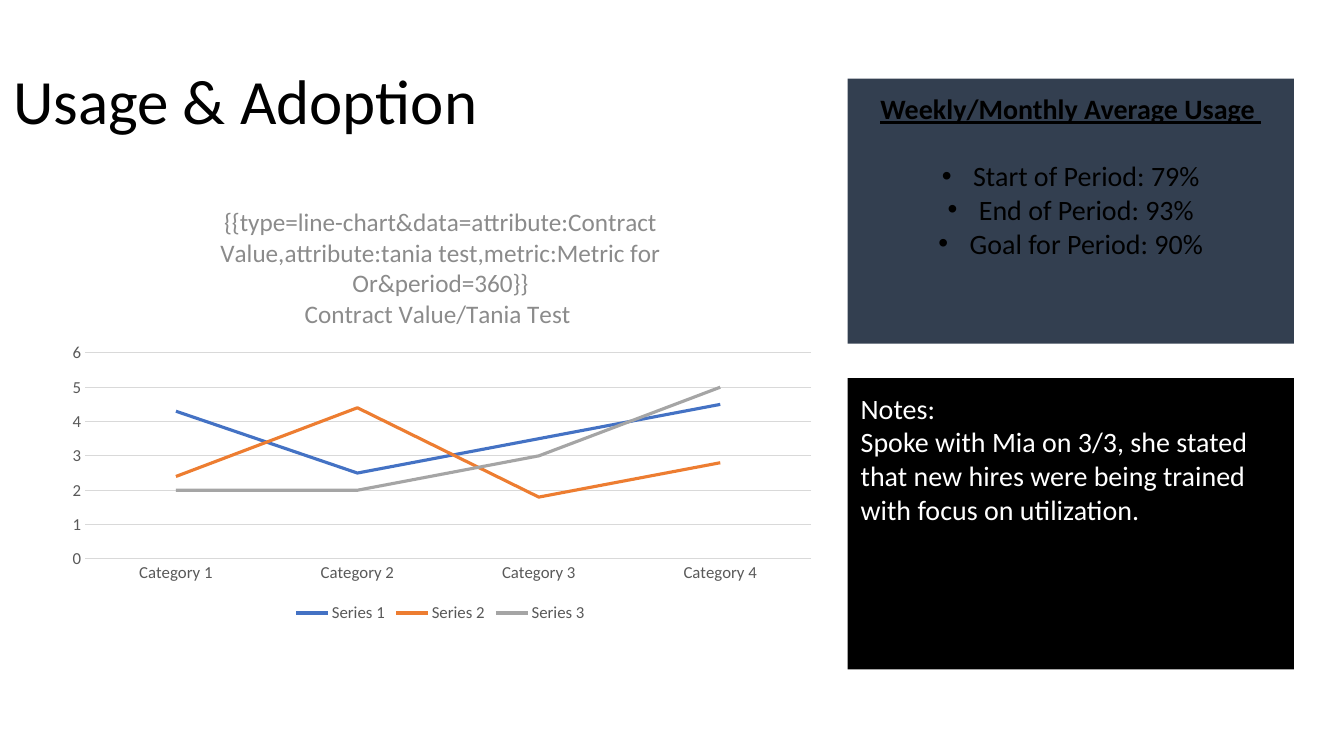
from dataclasses import dataclass

from lxml.etree import SubElement
from pptx import Presentation
from pptx.chart.data import CategoryChartData
from pptx.dml.color import RGBColor
from pptx.enum.chart import XL_CHART_TYPE, XL_LEGEND_POSITION, XL_TICK_MARK
from pptx.enum.shapes import MSO_SHAPE
from pptx.enum.text import MSO_ANCHOR, MSO_AUTO_SIZE, PP_ALIGN
from pptx.oxml import parse_xml
from pptx.oxml.ns import nsdecls, qn
from pptx.slide import Slide
from pptx.util import Cm, Pt


@dataclass(frozen=True)
class Theme:
    font: str = "Calibri"
    black: str = "000000"
    white: str = "FFFFFF"
    navy: str = "333F50"
    axis_text: str = "595959"
    chart_title: str = "8B8B8B"
    grid: str = "D9D9D9"
    title_size: float = 45
    body_size: float = 20
    chart_title_size: float = 18
    chart_size: float = 12


@dataclass(frozen=True)
class Line:
    text: str
    heading: bool = False
    bullet: bool = False


@dataclass(frozen=True)
class Panel:
    top: float
    height: float
    fill: str
    ink: str
    align: PP_ALIGN
    lines: tuple[Line, ...]


@dataclass(frozen=True)
class Series:
    name: str
    values: tuple[float, ...]
    color: str


THEME = Theme()
INSET = Cm(0.33)
PANEL_LEFT, PANEL_WIDTH = Cm(21.36), Cm(11.25)

PANELS = (
    Panel(1.98, 6.68, THEME.navy, THEME.black, PP_ALIGN.CENTER, (
        Line("Weekly/Monthly Average Usage ", heading=True),
        Line("Start of Period: 79%", bullet=True),
        Line("End of Period: 93%", bullet=True),
        Line("Goal for Period: 90%", bullet=True),
    )),
    Panel(9.53, 7.34, THEME.black, THEME.white, PP_ALIGN.LEFT, (
        Line("Notes:"),
        Line("Spoke with Mia on 3/3, she stated that new hires were being "
             "trained with focus on utilization."),
    )),
)

CHART_TITLE = (
    "{{type=line-chart&data=attribute:Contract Value,attribute:tania test,"
    "metric:Metric for Or&period=360}}\nContract Value/Tania Test "
)
CATEGORIES = ("Category 1", "Category 2", "Category 3", "Category 4")
SERIES = (
    Series("Series 1", (4.3, 2.5, 3.5, 4.5), "4472C4"),
    Series("Series 2", (2.4, 4.4, 1.8, 2.8), "ED7D31"),
    Series("Series 3", (2, 2, 3, 5), "A5A5A5"),
)


def style_font(font, size: float, color: str) -> None:
    font.name = THEME.font
    font.size = Pt(size)
    font.color.rgb = RGBColor.from_string(color)


def style_line(line, color: str, width: float) -> None:
    line.color.rgb = RGBColor.from_string(color)
    line.width = Pt(width)


def set_insets(frame) -> None:
    frame.margin_left = frame.margin_right = INSET
    frame.margin_top = frame.margin_bottom = INSET


def add_bullet(paragraph) -> None:
    properties = paragraph._p.get_or_add_pPr()
    properties.set("marL", str(Cm(0.79)))
    properties.set("indent", str(Cm(-0.79)))
    SubElement(properties, qn("a:buFont")).set("typeface", "Arial")
    SubElement(properties, qn("a:buChar")).set("char", "•")


def set_title(slide: Slide) -> None:
    title = slide.shapes.title
    title.left, title.top, title.width, title.height = Cm(0), Cm(0.94), Cm(28.4), Cm(1.68)
    frame = title.text_frame
    frame.text = "Usage & Adoption"
    frame.auto_size = MSO_AUTO_SIZE.NONE
    frame.vertical_anchor = MSO_ANCHOR.TOP
    set_insets(frame)
    frame.margin_top = Cm(0.61)
    heading = frame.paragraphs[0]
    heading.alignment = PP_ALIGN.LEFT
    style_font(heading.runs[0].font, THEME.title_size, THEME.black)


def add_panel(slide: Slide, panel: Panel) -> None:
    box = slide.shapes.add_shape(
        MSO_SHAPE.RECTANGLE, PANEL_LEFT, Cm(panel.top), PANEL_WIDTH, Cm(panel.height))
    box.shadow.inherit = False
    box.fill.solid()
    box.fill.fore_color.rgb = RGBColor.from_string(panel.fill)
    box.line.fill.background()
    frame = box.text_frame
    frame.word_wrap = True
    frame.vertical_anchor = MSO_ANCHOR.TOP
    set_insets(frame)
    frame.text = "\n".join(line.text for line in panel.lines)
    for paragraph, line in zip(frame.paragraphs, panel.lines):
        paragraph.alignment = panel.align
        font = paragraph.runs[0].font
        style_font(font, THEME.body_size, panel.ink)
        if line.heading:
            font.bold = font.underline = True
            paragraph.space_after = Pt(24)
        if line.bullet:
            add_bullet(paragraph)


def place_plot_area(chart, x: float, y: float, width: float, height: float) -> None:
    """Fix the inner plot area, in fractions of the chart's size."""
    plot_area = chart._chartSpace.chart.plotArea
    for layout in plot_area.findall(qn("c:layout")):
        plot_area.remove(layout)
    plot_area.insert(0, parse_xml(
        f'<c:layout {nsdecls("c")}><c:manualLayout><c:layoutTarget val="inner"/>'
        '<c:xMode val="edge"/><c:yMode val="edge"/>'
        f'<c:x val="{x}"/><c:y val="{y}"/><c:w val="{width}"/><c:h val="{height}"/>'
        '</c:manualLayout></c:layout>'))


def style_axes(chart) -> None:
    for axis in (chart.category_axis, chart.value_axis):
        axis.major_tick_mark = axis.minor_tick_mark = XL_TICK_MARK.NONE
        style_font(axis.tick_labels.font, THEME.chart_size, THEME.axis_text)
    style_line(chart.category_axis.format.line, THEME.grid, 0.75)
    values = chart.value_axis
    values.minimum_scale, values.maximum_scale, values.major_unit = 0, 6, 1
    values.format.line.fill.background()
    style_line(values.major_gridlines.format.line, THEME.grid, 0.75)


def add_usage_chart(slide: Slide) -> None:
    usage = CategoryChartData()
    usage.categories = CATEGORIES
    for series in SERIES:
        usage.add_series(series.name, series.values)
    chart = slide.shapes.add_chart(
        XL_CHART_TYPE.LINE, Cm(1.37), Cm(4.75), Cm(19.46), Cm(11.05), usage).chart
    style_font(chart.font, 10, THEME.black)
    title = chart.chart_title
    title.include_in_layout = False
    title.text_frame.text = CHART_TITLE
    for paragraph in title.text_frame.paragraphs:
        font = paragraph.runs[0].font
        style_font(font, THEME.chart_title_size, THEME.chart_title)
        font.bold = False
    chart.has_legend = True
    chart.legend.position = XL_LEGEND_POSITION.BOTTOM
    chart.legend.include_in_layout = False
    style_font(chart.legend.font, THEME.chart_size, THEME.axis_text)
    style_axes(chart)
    place_plot_area(chart, 0.04, 0.375, 0.94, 0.47)
    plot = chart.plots[0]
    plot.vary_by_categories = False
    for drawn, series in zip(plot.series, SERIES):
        drawn.smooth = False
        style_line(drawn.format.line, series.color, 2.25)


def main() -> None:
    deck = Presentation()
    deck.slide_width, deck.slide_height = Cm(33.87), Cm(19.05)
    slide = deck.slides.add_slide(deck.slide_layouts.get_by_name("Title Only"))
    set_title(slide)
    for panel in PANELS:
        add_panel(slide, panel)
    add_usage_chart(slide)
    deck.save("out.pptx")


if __name__ == "__main__":
    main()
